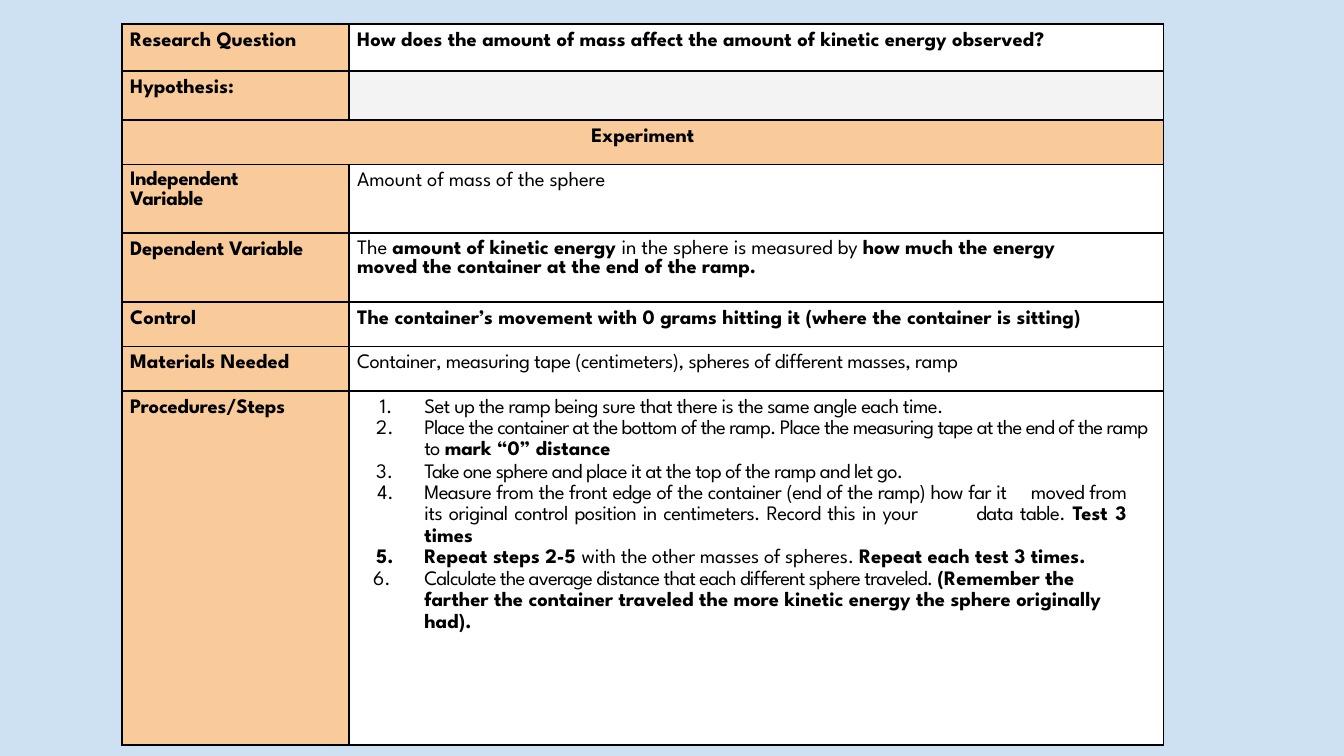
from pptx import Presentation
from pptx.dml.color import RGBColor as Rgb
from pptx.enum.text import PP_ALIGN as Align
from pptx.oxml.ns import qn
from pptx.util import Cm, Pt
from lxml.etree import SubElement as Sub

SKY = Rgb(0xCE, 0xE1, 0xF3)
PEACH = Rgb(0xF9, 0xCB, 0x9B)
GREY = Rgb(0xF3, 0xF3, 0xF3)
WHITE = Rgb(0xFF, 0xFF, 0xFF)
BLACK = Rgb(0, 0, 0)

COLS = [4.29, 15.39]
ROWS = [0.89, 0.89, 0.84, 1.3, 1.3, 0.84, 0.84, 6.7]
LEFT, TOP = 2.31, 0.45
PAD = 0.15
STEP = 1.42

FACTS = [
    ("Research Question", {},
     "*How does the amount of mass affect the amount of kinetic energy observed?*", {}),
    ("Hypothesis:", {}, "", {}),
    ("Experiment", {"align": Align.CENTER, "left": 0}, None, {}),
    ("Independent Variable", {"space": -0.2, "line": 1.02, "right": 1.1, "top": 0.13},
     "Amount of mass of the sphere", {"space": -0.05}),
    ("Dependent Variable", {"space": -0.15},
     "The *amount of kinetic energy* in the sphere is measured by "
     "*how much the energy moved the container at the end of the ramp.*",
     {"space": -0.05, "line": 1.02, "right": 1.5, "top": 0.13}),
    ("Control", {},
     "*The container’s movement with 0 grams hitting it (where the container is sitting)*", {}),
    ("Materials Needed", {},
     "Container, measuring tape (centimeters), spheres of different masses, ramp",
     {"space": -0.25}),
    ("Procedures/Steps", {"space": -0.1}, "", {}),
]

STEPS = [
    ("Set up the ramp being sure that there is the same angle each time.",
     {"space": -0.35, "hang": 0.84}),
    ("Place the container at the bottom of the ramp. Place the measuring tape "
     "at the end of the ramp to *mark “0” distance*",
     {"space": -0.45, "line": 1.14}),
    ("Take one sphere and place it at the top of the ramp and let go.",
     {"space": -0.4, "before": 1.8}),
    ("Measure from the front edge of the container (end of the ramp) how far it \t"
     "moved from its original control position in centimeters. Record this in your \t"
     "data table. *Test 3 times*",
     {"space": -0.3, "line": 1.14, "hang": 0.89, "right": 0.7, "align": Align.JUSTIFY}),
    ("*Repeat steps 2-5 *with the other masses of spheres. *Repeat each test 3 times.*",
     {"space": -0.15, "line": 1.14}),
    ("Calculate the average distance that each different sphere traveled. "
     "*(Remember the farther the container traveled the more kinetic energy "
     "the sphere originally had).*",
     {"space": -0.45, "line": 1.14, "hang": 0.97, "right": 0.7}),
]


def write(para, text, space=0, line=None, before=None, align=Align.LEFT,
          left=PAD, right=0, hang=0, step=False, font="League Spartan", size=11):
    para.alignment = align
    if line:
        para.line_spacing = line
    if before:
        para.space_before = Pt(before)
    props = para._p.get_or_add_pPr()
    props.set("marL", str(Cm(left)))
    props.set("marR", str(Cm(right)))
    props.set("indent", str(-Cm(hang)))
    if step:
        Sub(props, qn("a:buAutoNum"), type="arabicPeriod")
        tabs = Sub(props, qn("a:tabLst"))
        Sub(tabs, qn("a:tab"), pos=str(Cm(left)), algn="l")
    for order, part in enumerate(text.split("*")):
        if part:
            bold = order % 2 == 1
            run = para.add_run()
            run.text = part
            run.font.name = font
            run.font.size = Pt(size)
            run.font.bold = bold
            run.font.color.rgb = BLACK
            gap = 0 if bold and "*" in text.strip("*") else space
            run._r.get_or_add_rPr().set("spc", str(round(gap * 100)))


class Sheet:
    def __init__(self, deck):
        self.slide = deck.slides.add_slide(deck.slide_layouts[6])
        back = self.slide.background.fill
        back.solid()
        back.fore_color.rgb = SKY

    def grid(self):
        frame = self.slide.shapes.add_table(
            len(ROWS), len(COLS), Cm(LEFT), Cm(TOP), Cm(sum(COLS)), Cm(sum(ROWS)))
        table = frame.table
        table.first_row = table.horz_banding = False
        for col, width in zip(table.columns, COLS):
            col.width = Cm(width)
        for row, height in zip(table.rows, ROWS):
            row.height = Cm(height)
        return table

    def cell(self, cell, fill, text="", top=PAD, **style):
        cell.margin_left = cell.margin_right = cell.margin_bottom = 0
        cell.margin_top = Cm(top)
        props = cell._tc.get_or_add_tcPr()
        for side in "LRTB":
            edge = Sub(props, qn(f"a:ln{side}"), w=str(Pt(1)))
            Sub(Sub(edge, qn("a:solidFill")), qn("a:srgbClr"), val=str(BLACK))
        cell.fill.solid()
        cell.fill.fore_color.rgb = fill
        if text:
            write(cell.text_frame.paragraphs[0], text, **style)

    def steps(self, cell):
        frame = cell.text_frame
        for order, (text, style) in enumerate(STEPS):
            para = frame.add_paragraph() if order else frame.paragraphs[0]
            write(para, text, **{"left": STEP, "hang": 0.91, "step": True, **style})


def main():
    deck = Presentation()
    deck.slide_width, deck.slide_height = Cm(25.4), Cm(14.29)
    sheet = Sheet(deck)
    table = sheet.grid()
    for row, (head, look, body, style) in enumerate(FACTS):
        label, value = table.cell(row, 0), table.cell(row, 1)
        if body is None:
            label.merge(value)
        sheet.cell(label, PEACH, f"*{head}*", **look)
        fill = PEACH if body is None else GREY if head == "Hypothesis:" else WHITE
        sheet.cell(value, fill, body, **style)
    sheet.steps(table.cell(len(ROWS) - 1, 1))
    deck.save("out.pptx")


if __name__ == "__main__":
    main()
